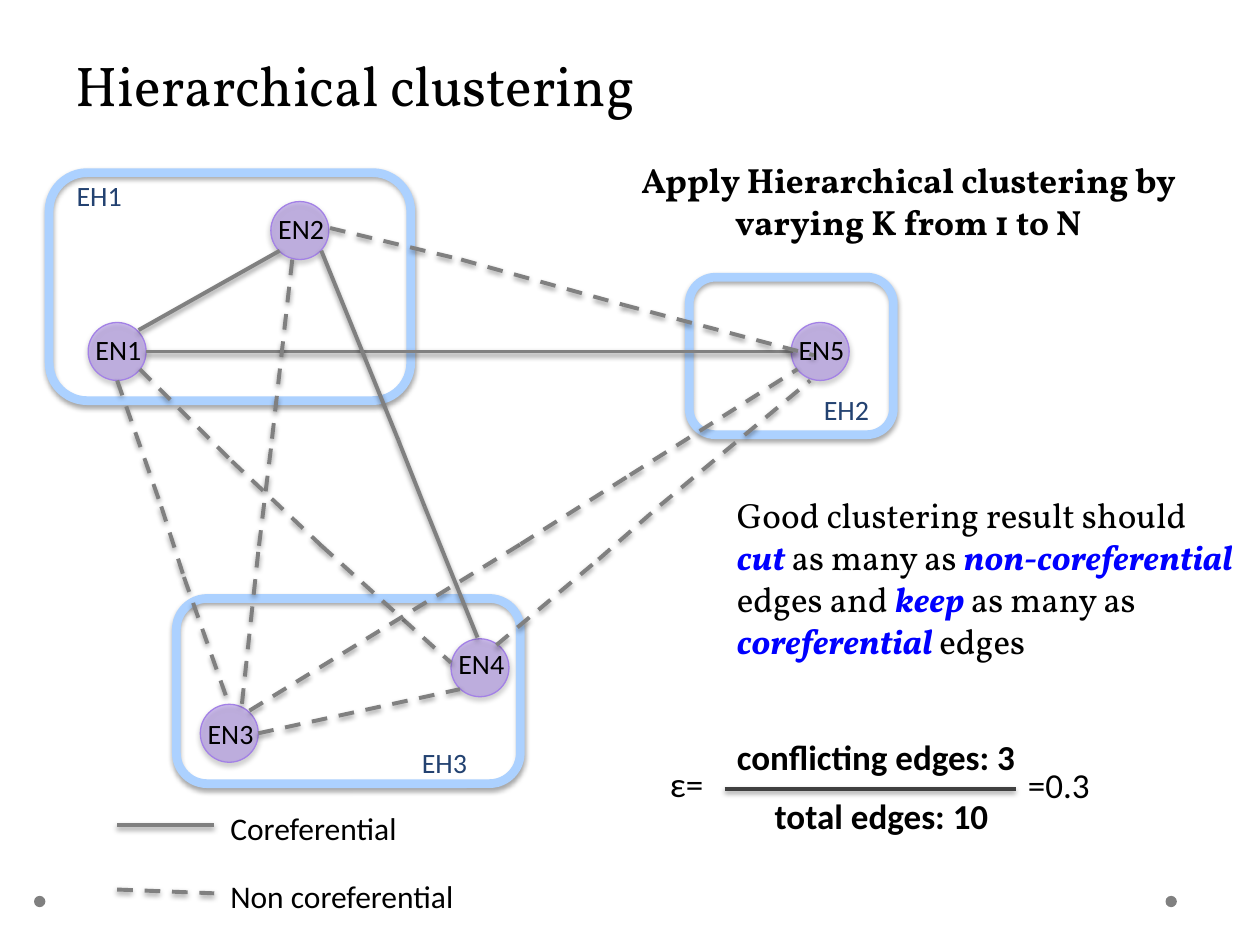
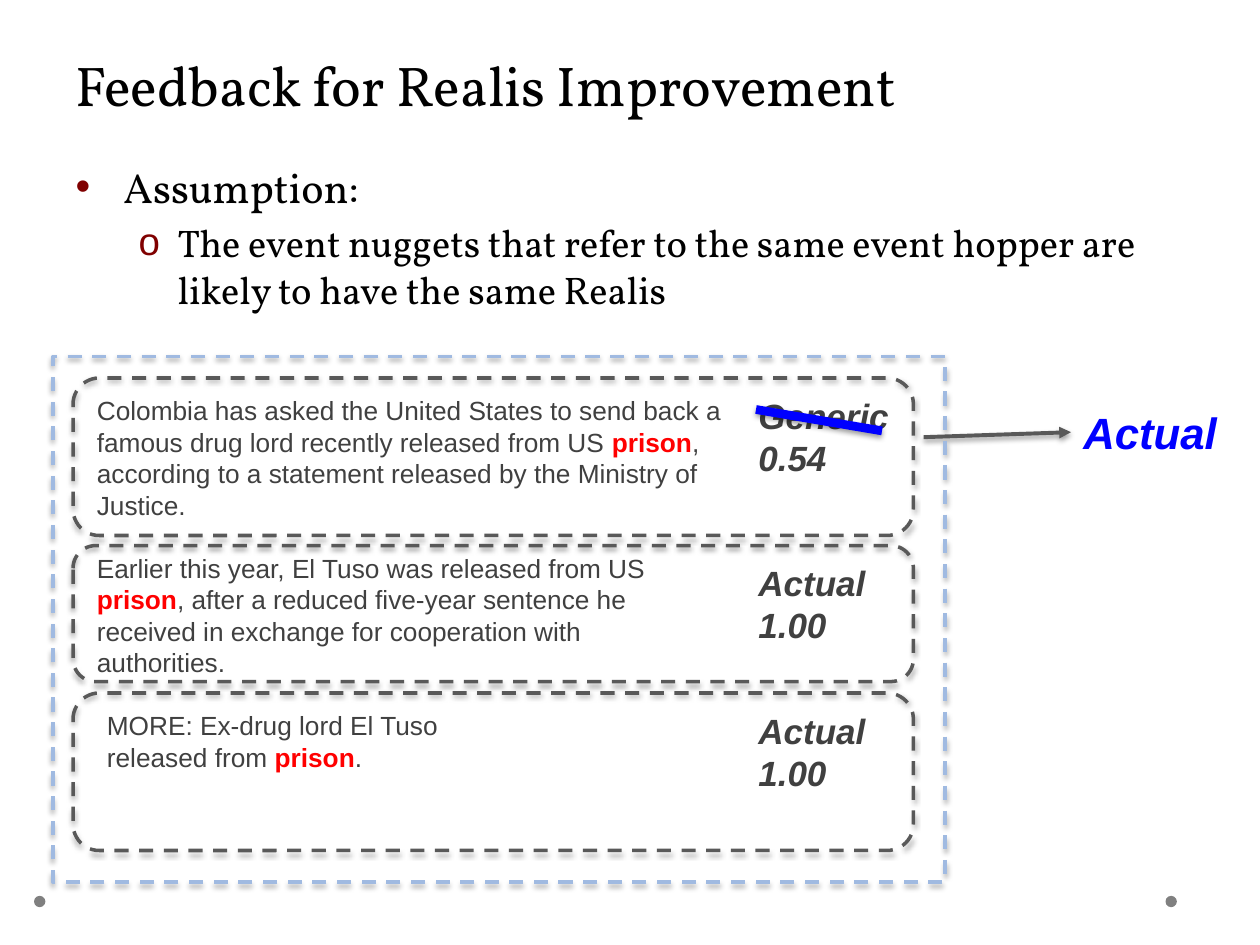
from typing import NamedTuple, Optional

from lxml import etree
from pptx import Presentation
from pptx.dml.color import RGBColor
from pptx.enum.dml import MSO_LINE
from pptx.enum.shapes import MSO_CONNECTOR, MSO_SHAPE
from pptx.enum.text import MSO_ANCHOR, PP_ALIGN
from pptx.oxml import parse_xml
from pptx.oxml.ns import nsdecls, qn
from pptx.util import Inches, Pt

COLORS = {
    "text": "000000",
    "dot": "808080",
    "edge": "808080",
    "node": "A381E6",
    "hopper": "ACD1FF",
    "hopper_label": "234271",
    "bullet": "800000",
    "dark": "404040",
    "card": "595959",
    "frame": "A0BAE1",
    "blue": "0000FF",
    "red": "FF0000",
}
SERIF, SANS, ARIAL = "Vollkorn", "Calibri", "Arial"
TITLE_AND_CONTENT, TITLE_ONLY = 1, 5
NODE_SIZE = 0.46

Box = tuple[float, float, float, float]
Point = tuple[float, float]


class Node(NamedTuple):
    name: str
    left: float
    top: float
    label_drop: float = 0.03


class Hopper(NamedTuple):
    name: str
    box: Box
    label_at: Point


class Edge(NamedTuple):
    points: tuple[Point, ...]
    dashed: bool = True


class Caption(NamedTuple):
    text: str
    box: Box
    bold: bool = False
    align: PP_ALIGN = PP_ALIGN.LEFT
    size: int = 20
    font: str = SANS


class Card(NamedTuple):
    top: float
    height: float
    quote: str
    quote_box: Box
    verdict: str


class Bullet(NamedTuple):
    text: str
    level: int
    symbol: str
    size: int
    margin: float
    hanging: float


NODES = [
    Node("EN1", 0.7, 2.56),
    Node("EN2", 2.15, 1.6),
    Node("EN3", 1.59, 5.59, 0.05),
    Node("EN4", 3.58, 5.07, 0.01),
    Node("EN5", 6.28, 2.56),
]
HOPPERS = [
    Hopper("EH1", (0.39, 1.37, 2.87, 1.81), (0.51, 1.37)),
    Hopper("EH2", (5.47, 2.2, 1.62, 1.25), (6.44, 3.07)),
    Hopper("EH3", (1.4, 4.75, 2.73, 1.47), (3.25, 5.87)),
]
EDGES = [
    Edge(((1.1, 2.62), (2.22, 1.99)), dashed=False),
    Edge(((1.16, 2.79), (6.29, 2.79)), dashed=False),
    Edge(((2.55, 1.99), (3.16, 3.49), (3.37, 4.02), (3.79, 5.06)), dashed=False),
    Edge(((2.05, 5.82), (3.65, 5.47))),
    Edge(((2.62, 1.81), (3.66, 2.06), (4.95, 2.42), (6.46, 2.82))),
    Edge(((0.93, 3.02), (1.28, 4.02), (1.46, 4.58), (1.81, 5.57))),
    Edge(((2.32, 2.06), (2.15, 3.56), (2.05, 4.38), (1.92, 5.59))),
    Edge(((1.11, 2.93), (1.84, 3.66), (2.55, 4.33), (3.58, 5.26))),
    Edge(((1.98, 5.64), (4.13, 4.32), (5, 3.77), (6.33, 2.93))),
    Edge(((3.94, 5.12), (4.75, 4.44), (5.24, 4.01), (6.43, 3.02))),
    Edge(((0.93, 6.55), (1.7, 6.55)), dashed=False),
    Edge(((0.93, 7.06), (1.7, 7.09))),
]
CAPTIONS = [
    Caption("Coreferential", (1.73, 6.37, 2.11, 0.4), size=18),
    Caption("Non coreferential", (1.73, 6.91, 2.47, 0.4), size=18),
    Caption("conflicting edges: 3", (5.75, 5.79, 3.04, 0.44), bold=True),
    Caption("total edges: 10", (6.05, 6.26, 3.04, 0.44), bold=True),
    Caption("=0.3", (8.06, 6.01, 0.9, 0.44)),
    Caption("ε=", (4.78, 6, 0.9, 0.44), align=PP_ALIGN.RIGHT),
    Caption("Apply Hierarchical clustering by varying K from 1 to N",
            (4.5, 1.21, 5.42, 0.77), bold=True, align=PP_ALIGN.CENTER, font=SERIF),
    Caption("Good clustering result should *cut *as many as *non-coreferential *"
            "edges and *keep *as many as *coreferential *edges",
            (5.75, 3.87, 4.17, 1.45), font=SERIF),
]
CARDS = [
    Card(3, 1.25,
         "Colombia has asked the United States to send back a famous drug lord recently "
         "released from US *prison*, according to a statement released by the Ministry of Justice.",
         (0.67, 3.08, 5.58, 1.11), "Generic\n0.54"),
    Card(4.33, 1.08,
         "Earlier this year, El Tuso was released from US *prison*, after a reduced five-year "
         "sentence he received in exchange for cooperation with authorities.",
         (0.67, 4.33, 4.92, 1.11), "Actual\n1.00"),
    Card(5.5, 1.25, "MORE: Ex-drug lord El Tuso released from *prison*.",
         (0.75, 5.58, 3.42, 0.61), "Actual\n1.00"),
]
BULLETS = [
    Bullet("Assumption:", 0, "•", 24, 0.38, 0.38),
    Bullet("The event nuggets that refer to the same event hopper are likely to have the same Realis",
           1, "o", 22, 0.81, 0.31),
]


def rgb(color: str) -> RGBColor:
    return RGBColor.from_string(COLORS[color])


def add_run(paragraph, text: str, *, font: str, size: float, color: str = "text",
            bold: bool = False, italic: bool = False) -> None:
    run = paragraph.add_run()
    run.text = text
    run.font.name = font
    run.font.size = Pt(size)
    run.font.bold = bold
    run.font.italic = italic
    run.font.color.rgb = rgb(color)


def add_text(slide, text: str, box: Box, *, font: str = SANS, size: float = 16,
             color: str = "text", bold: bool = False, italic: bool = False,
             align: PP_ALIGN = PP_ALIGN.LEFT, accent: str = "blue",
             accent_italic: bool = True) -> None:
    frame = slide.shapes.add_textbox(*map(Inches, box)).text_frame
    frame.word_wrap = True
    for index, line in enumerate(text.split("\n")):
        paragraph = frame.add_paragraph() if index else frame.paragraphs[0]
        paragraph.alignment = align
        for position, part in enumerate(line.split("*")):
            if position % 2:
                add_run(paragraph, part, font=font, size=size, color=accent,
                        bold=True, italic=accent_italic)
            else:
                add_run(paragraph, part, font=font, size=size, color=color,
                        bold=bold, italic=italic)


def add_shadow(shape, opacity: int, distance: float) -> None:
    properties = shape._element.spPr
    for effects in properties.findall(qn("a:effectLst")):
        properties.remove(effects)
    properties.append(parse_xml(
        f'<a:effectLst {nsdecls("a")}><a:outerShdw blurRad="{Pt(3.1)}" dist="{Pt(distance)}" '
        f'dir="5400000" rotWithShape="0"><a:srgbClr val="000000">'
        f'<a:alpha val="{opacity * 1000}"/></a:srgbClr></a:outerShdw></a:effectLst>'))


def style_line(line, color: str, width: float, dashed: bool) -> None:
    line.color.rgb = rgb(color)
    line.width = Pt(width)
    if dashed:
        line.dash_style = MSO_LINE.DASH


def add_shape(slide, kind: MSO_SHAPE, box: Box, *, fill: Optional[str] = None,
              opacity: int = 100, line: Optional[str] = None, width: float = 1,
              dashed: bool = False) -> None:
    shape = slide.shapes.add_shape(kind, *map(Inches, box))
    shape.shadow.inherit = False
    if fill:
        shape.fill.solid()
        shape.fill.fore_color.rgb = rgb(fill)
        if opacity < 100:
            color = shape._element.spPr.find(qn("a:solidFill"))[0]
            etree.SubElement(color, qn("a:alpha"), val=str(opacity * 1000))
    else:
        shape.fill.background()
    if line:
        style_line(shape.line, line, width, dashed)
        add_shadow(shape, 35, 1.8)
    else:
        shape.line.fill.background()


def add_line(slide, start: Point, end: Point, *, color: str = "edge", width: float = 2.25,
             dashed: bool = False, arrow: bool = False) -> None:
    connector = slide.shapes.add_connector(
        MSO_CONNECTOR.STRAIGHT, *map(Inches, (*start, *end)))
    style_line(connector.line, color, width, dashed)
    if arrow:
        etree.SubElement(connector.line._get_or_add_ln(), qn("a:tailEnd"), type="triangle")
    add_shadow(connector, 38, 1.6)


def add_slide(presentation, layout: int, title: str):
    slide = presentation.slides.add_slide(presentation.slide_layouts[layout])
    for left in (9.25, 0.27):
        add_shape(slide, MSO_SHAPE.OVAL, (left, 7.11, 0.09, 0.09), fill="dot")
    place(slide.shapes.title, (0.5, 0, 9, 1.07))
    frame = slide.shapes.title.text_frame
    frame.vertical_anchor = MSO_ANCHOR.MIDDLE
    paragraph = frame.paragraphs[0]
    paragraph.alignment = PP_ALIGN.LEFT
    paragraph.line_spacing = Pt(58)
    add_run(paragraph, title, font=SERIF, size=32)
    return slide


def place(shape, box: Box) -> None:
    shape.left, shape.top, shape.width, shape.height = map(Inches, box)


def add_bullet(paragraph, bullet: Bullet) -> None:
    paragraph.level = bullet.level
    paragraph.space_before = Pt(bullet.size * 0.2)
    properties = paragraph._p.get_or_add_pPr()
    properties.set("marL", str(Inches(bullet.margin)))
    properties.set("indent", str(-Inches(bullet.hanging)))
    color = etree.SubElement(properties, qn("a:buClr"))
    etree.SubElement(color, qn("a:srgbClr"), val=COLORS["bullet"])
    etree.SubElement(properties, qn("a:buFont"), typeface=ARIAL)
    etree.SubElement(properties, qn("a:buChar"), char=bullet.symbol)
    add_run(paragraph, bullet.text, font=SERIF, size=bullet.size)


def build_clustering(presentation) -> None:
    slide = add_slide(presentation, TITLE_ONLY, "Hierarchical clustering")
    for node in NODES:
        add_shape(slide, MSO_SHAPE.OVAL, (node.left, node.top, NODE_SIZE, NODE_SIZE),
                  fill="node", opacity=47, line="node", width=0.75)
    for hopper in HOPPERS:
        add_shape(slide, MSO_SHAPE.ROUNDED_RECTANGLE, hopper.box, line="hopper", width=5)
    for edge in EDGES:
        for start, end in zip(edge.points, edge.points[1:]):
            add_line(slide, start, end, dashed=edge.dashed)
    add_line(slide, (5.75, 6.26), (8.06, 6.26), color="dark")
    for caption in CAPTIONS:
        add_text(slide, caption.text, caption.box, font=caption.font, size=caption.size,
                 bold=caption.bold, align=caption.align)
    for node in NODES:
        add_text(slide, node.name, (node.left - 0.04, node.top + node.label_drop, 0.8, 0.37))
    for hopper in HOPPERS:
        add_text(slide, hopper.name, (*hopper.label_at, 0.8, 0.37), color="hopper_label")


def build_feedback(presentation) -> None:
    slide = add_slide(presentation, TITLE_AND_CONTENT, "Feedback for Realis Improvement")
    body = slide.placeholders[1]
    place(body, (0.5, 1.23, 9, 5.47))
    for index, bullet in enumerate(BULLETS):
        frame = body.text_frame
        add_bullet(frame.add_paragraph() if index else frame.paragraphs[0], bullet)
    for card in CARDS:
        add_text(slide, card.quote, card.quote_box, font=ARIAL, size=15, color="dark",
                 accent="red", accent_italic=False)
        add_text(slide, card.verdict, (5.92, card.top + 0.08, 1.42, 0.77), font=ARIAL,
                 size=20, color="dark", bold=True, italic=True)
        add_shape(slide, MSO_SHAPE.ROUNDED_RECTANGLE, (0.58, card.top, 6.67, card.height),
                  line="card", width=2, dashed=True)
    add_text(slide, "Actual", (8.5, 3.17, 1.33, 0.52), font=ARIAL, size=25, color="blue",
             bold=True, italic=True)
    add_line(slide, (7.33, 3.47), (8.5, 3.43), color="card", arrow=True)
    add_line(slide, (6, 3.25), (7, 3.42), color="blue", width=5)
    add_shape(slide, MSO_SHAPE.RECTANGLE, (0.42, 2.83, 7.08, 4.17), line="frame", width=2,
              dashed=True)


def main() -> None:
    presentation = Presentation()
    presentation.slide_width, presentation.slide_height = Inches(10), Inches(7.5)
    build_clustering(presentation)
    build_feedback(presentation)
    presentation.save("out.pptx")


if __name__ == "__main__":
    main()
